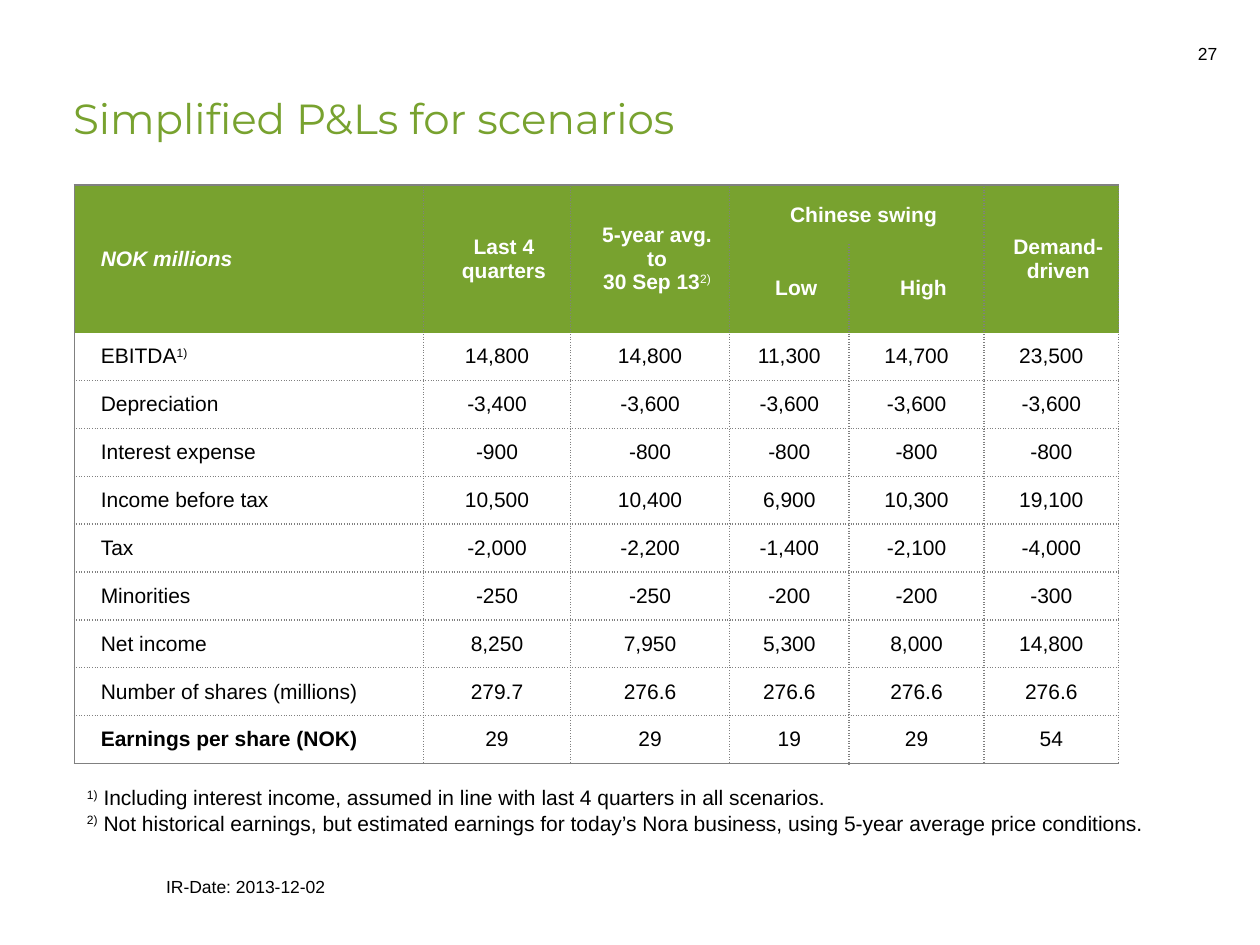
from dataclasses import dataclass

from lxml.etree import SubElement
from pptx import Presentation
from pptx.dml.color import RGBColor
from pptx.enum.text import MSO_ANCHOR, PP_ALIGN
from pptx.oxml.ns import qn
from pptx.util import Inches, Pt


@dataclass(frozen=True)
class Theme:
    green: str = "78A22F"
    black: str = "000000"
    white: str = "FFFFFF"
    grey: str = "808080"
    body_font: str = "Arial"
    title_font: str = "Montserrat"
    title_size: int = 24
    body_size: int = 12
    small_size: int = 10


COLUMN_WIDTHS = [2.77, 1.17, 1.26, 0.95, 1.07, 1.07]
ROW_HEIGHTS = [0.47, 0.56] + [0.38] * 9
HEADER_ROWS = 2
HEADERS = [
    (0, 0, 1, 0, "NOK millions"),
    (0, 1, 1, 1, "Last 4 quarters"),
    (0, 2, 1, 2, "5-year avg. to\n30 Sep 13^2)"),
    (0, 3, 0, 4, "Chinese swing"),
    (0, 5, 1, 5, "Demand-driven"),
    (1, 3, 1, 3, "Low"),
    (1, 4, 1, 4, "High"),
]
RESULTS = [
    ["EBITDA^1)", "14,800", "14,800", "11,300", "14,700", "23,500"],
    ["Depreciation", "-3,400", "-3,600", "-3,600", "-3,600", "-3,600"],
    ["Interest expense", "-900", "-800", "-800", "-800", "-800"],
    ["Income before tax", "10,500", "10,400", "6,900", "10,300", "19,100"],
    ["Tax", "-2,000", "-2,200", "-1,400", "-2,100", "-4,000"],
    ["Minorities", "-250", "-250", "-200", "-200", "-300"],
    ["Net income", "8,250", "7,950", "5,300", "8,000", "14,800"],
    ["Number of shares (millions)", "279.7", "276.6", "276.6", "276.6", "276.6"],
    ["Earnings per share (NOK)", "29", "29", "19", "29", "54"],
]
FOOTNOTES = (
    "^1)^ Including interest income, assumed in line with last 4 quarters in all scenarios.\n"
    "^2)^ Not historical earnings, but estimated earnings for today’s Nora business, "
    "using 5-year average price conditions."
)


class SlideBuilder:
    """Draws styled elements on one slide; text between carets is superscript."""

    def __init__(self, slide, theme):
        self.slide = slide
        self.theme = theme

    def set_text(self, text_frame, text, color, size, font=None, bold=False,
                 italic=False, align=PP_ALIGN.LEFT):
        text_frame.text = text.replace("^", "")
        for paragraph, line in zip(text_frame.paragraphs, text.split("\n")):
            paragraph.alignment = align
            paragraph.clear()
            for index, part in enumerate(line.split("^")):
                if not part:
                    continue
                raised = index % 2 == 1
                run = paragraph.add_run()
                run.text = part
                run.font.name = font or self.theme.body_font
                run.font.size = Pt(size)
                run.font.bold = bold and not raised
                run.font.italic = italic
                run.font.color.rgb = RGBColor.from_string(color)
                if raised:
                    run._r.get_or_add_rPr().set("baseline", "30000")

    def set_margins(self, target, margins):
        (target.margin_left, target.margin_top,
         target.margin_right, target.margin_bottom) = map(Inches, margins)

    def text_box(self, box, text, color, size, font=None, wrap=True,
                 anchor=MSO_ANCHOR.TOP, margins=(0.1, 0.05, 0.1, 0.05)):
        text_frame = self.slide.shapes.add_textbox(*map(Inches, box)).text_frame
        text_frame.word_wrap = wrap
        text_frame.vertical_anchor = anchor
        self.set_margins(text_frame, margins)
        self.set_text(text_frame, text, color, size, font)

    def borders(self, cell, dashes):
        properties = cell._tc.get_or_add_tcPr()
        for index, (side, dash) in enumerate(zip("LRTB", dashes)):
            line = SubElement(properties, qn(f"a:ln{side}"), w=str(Pt(1)))
            if dash:
                fill = SubElement(line, qn("a:solidFill"))
                SubElement(fill, qn("a:srgbClr"), val=self.theme.grey)
                SubElement(line, qn("a:prstDash"), val=dash)
            else:
                SubElement(line, qn("a:noFill"))
            properties.insert(index, line)

    def style_cell(self, cell, row, column):
        is_header = row < HEADER_ROWS
        if is_header:
            cell.fill.solid()
            cell.fill.fore_color.rgb = RGBColor.from_string(self.theme.green)
        else:
            cell.fill.background()
        cell.vertical_anchor = MSO_ANCHOR.MIDDLE
        padded = is_header or column == 0
        self.set_margins(cell, (0.21, 0.05, 0.1, 0.05) if padded else (0, 0, 0, 0))
        left = "solid" if column == 0 else "sysDot"
        top = "solid" if row == 0 else "sysDot" if row > HEADER_ROWS else None
        bottom = "solid" if row == len(ROW_HEIGHTS) - 1 else None if is_header else "sysDot"
        self.borders(cell, (left, "sysDot", top, bottom))

    def results_table(self, left, top):
        theme = self.theme
        table = self.slide.shapes.add_table(
            len(ROW_HEIGHTS), len(COLUMN_WIDTHS), Inches(left), Inches(top),
            Inches(sum(COLUMN_WIDTHS)), Inches(sum(ROW_HEIGHTS))).table
        table.first_row = table.horz_banding = False
        for column, width in zip(table.columns, COLUMN_WIDTHS):
            column.width = Inches(width)
        for row, height in zip(table.rows, ROW_HEIGHTS):
            row.height = Inches(height)
        for row in range(len(ROW_HEIGHTS)):
            for column in range(len(COLUMN_WIDTHS)):
                self.style_cell(table.cell(row, column), row, column)
        for row, column, last_row, last_column, text in HEADERS:
            cell = table.cell(row, column)
            if (row, column) != (last_row, last_column):
                cell.merge(table.cell(last_row, last_column))
            self.set_text(cell.text_frame, text, theme.white, theme.body_size, bold=True,
                          italic=column == 0,
                          align=PP_ALIGN.CENTER if column else PP_ALIGN.LEFT)
        for row, values in enumerate(RESULTS, HEADER_ROWS):
            for column, text in enumerate(values):
                self.set_text(table.cell(row, column).text_frame, text, theme.black,
                              theme.body_size,
                              bold=column == 0 and row == len(ROW_HEIGHTS) - 1,
                              align=PP_ALIGN.CENTER if column else PP_ALIGN.LEFT)


def main():
    presentation = Presentation()
    presentation.slide_width = Inches(10)
    presentation.slide_height = Inches(7.5)
    theme = Theme()
    builder = SlideBuilder(
        presentation.slides.add_slide(presentation.slide_layouts[6]), theme)
    builder.text_box((1.22, 6.9, 2.91, 0.27), "IR-Date: 2013-12-02",
                     theme.black, theme.small_size)
    builder.text_box((9.41, 0.29, 0.37, 0.27), "27",
                     theme.black, theme.small_size, wrap=False)
    builder.text_box((0.58, 0.25, 8.83, 0.93), "Simplified P&Ls for scenarios",
                     theme.green, theme.title_size, theme.title_font,
                     anchor=MSO_ANCHOR.BOTTOM, margins=(0, 0.05, 0.1, 0.05))
    builder.results_table(0.59, 1.47)
    builder.text_box((0.69, 6.13, 8.73, 0.5), FOOTNOTES, theme.black, theme.body_size,
                     anchor=MSO_ANCHOR.BOTTOM, margins=(0, 0, 0, 0))
    presentation.save("out.pptx")


if __name__ == "__main__":
    main()
